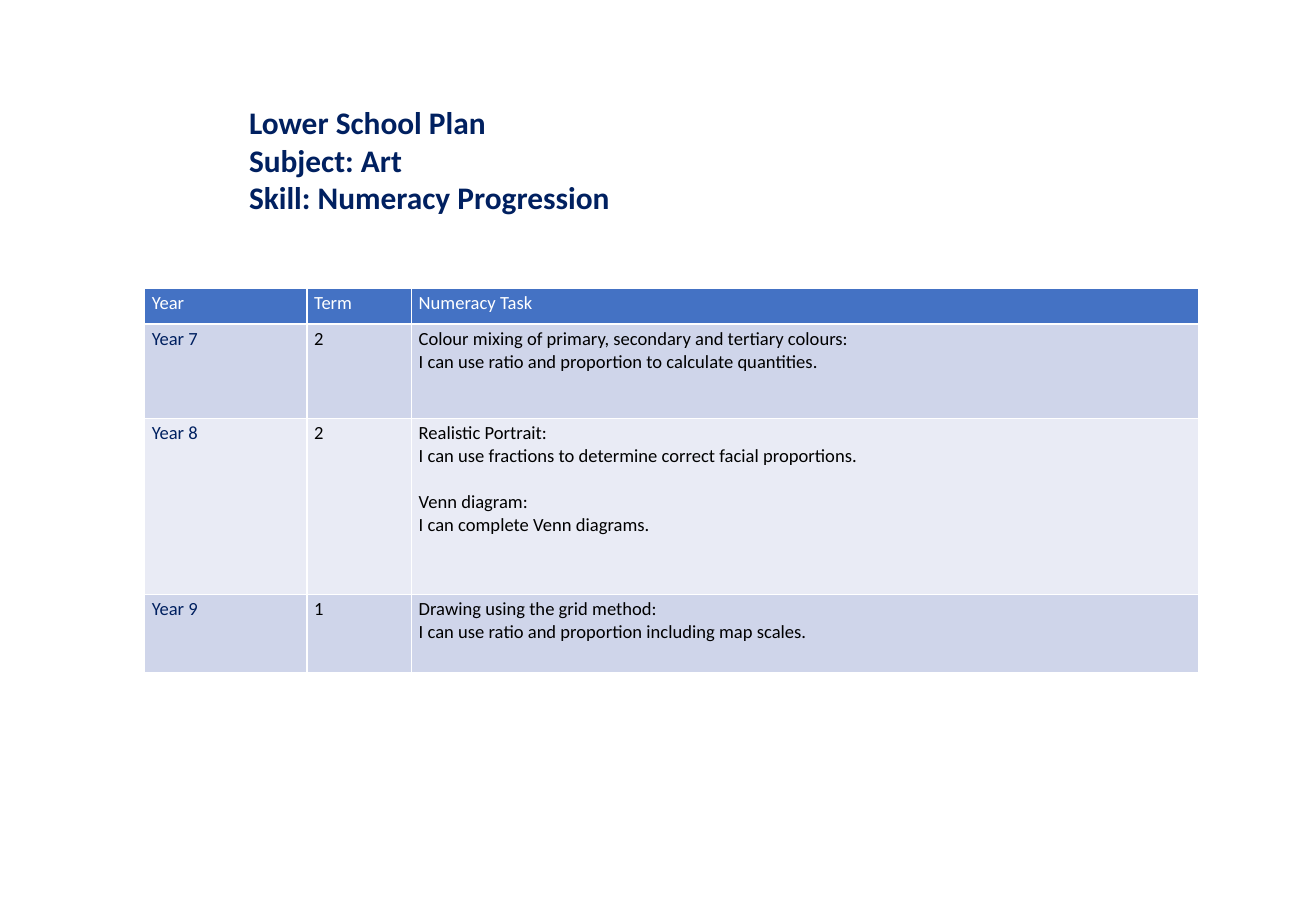
from pptx import Presentation
from pptx.dml.color import RGBColor
from pptx.enum.text import MSO_ANCHOR as Anchor, MSO_AUTO_SIZE as AutoSize, PP_ALIGN as Align
from pptx.util import Pt

NAVY, WHITE, BLACK = "002060", "FFFFFF", "000000"
HEADER_BLUE, BAND_DARK, BAND_LIGHT = "4472C4", "CFD5EA", "E9EBF5"


def rgb(value):
    return RGBColor.from_string(value)


def add_line(frame, index, text, size, colour, bold=False):
    line = frame.paragraphs[0] if index == 0 else frame.add_paragraph()
    run = line.add_run()
    run.text = text
    run.font.name = "Calibri"
    run.font.size = Pt(size)
    run.font.bold = bold
    run.font.color.rgb = rgb(colour)
    return line


deck = Presentation()
deck.slide_width, deck.slide_height = Pt(780), Pt(540)
slide = deck.slides.add_slide(deck.slide_layouts[5])

# Heading
heading = slide.shapes.title
heading.left, heading.top = Pt(140.4), Pt(57.6)
heading.width, heading.height = Pt(469.4), Pt(74.9)
heading_text = heading.text_frame
heading_text.word_wrap = True
heading_text.auto_size = AutoSize.NONE
heading_text.vertical_anchor = Anchor.TOP
for i, text in enumerate(["Lower School Plan", "Subject: Art", "Skill: Numeracy Progression"]):
    add_line(heading_text, i, text, 18.6, NAVY, bold=True).alignment = Align.LEFT

# Plan: each task is a list of topics, each topic a list of lines
plan = [
    ("Year", "Term", [["Numeracy Task"]]),
    ("Year 7", "2", [["Colour mixing of primary, secondary and tertiary colours:",
                      "I can use ratio and proportion to calculate quantities."]]),
    ("Year 8", "2", [["Realistic Portrait:",
                      "I can use fractions to determine correct facial proportions."],
                     ["Venn diagram:",
                      "I can complete Venn diagrams."]]),
    ("Year 9", "1", [["Drawing using the grid method:",
                      "I can use ratio and proportion including map scales."]]),
]
column_widths = [96.2, 62, 466.8]
row_heights = [21, 56, 104.4, 46.4]

# Table; its default style draws the white rules
tasks = slide.shapes.add_table(len(plan), len(column_widths), Pt(85.8), Pt(171),
                               Pt(sum(column_widths)), Pt(sum(row_heights))).table
for column, width in zip(tasks.columns, column_widths):
    column.width = Pt(width)
for row, height in zip(tasks.rows, row_heights):
    row.height = Pt(height)

for r, (year, term, topics) in enumerate(plan):
    band = HEADER_BLUE if r == 0 else BAND_DARK if r % 2 else BAND_LIGHT
    for c, content in enumerate([[[year]], [[term]], topics]):
        cell = tasks.cell(r, c)
        cell.fill.solid()
        cell.fill.fore_color.rgb = rgb(band)
        cell.margin_left = cell.margin_right = Pt(4.2)
        cell.margin_top = cell.margin_bottom = Pt(2.1)
        colour = WHITE if r == 0 else NAVY if c == 0 else BLACK
        count = 0
        for t, topic in enumerate(content):
            for n, text in enumerate(topic):
                line = add_line(cell.text_frame, count, text, 11, colour)
                if t > 0 and n == 0:
                    line.space_before = Pt(13.4)
                count += 1

deck.save("out.pptx")
